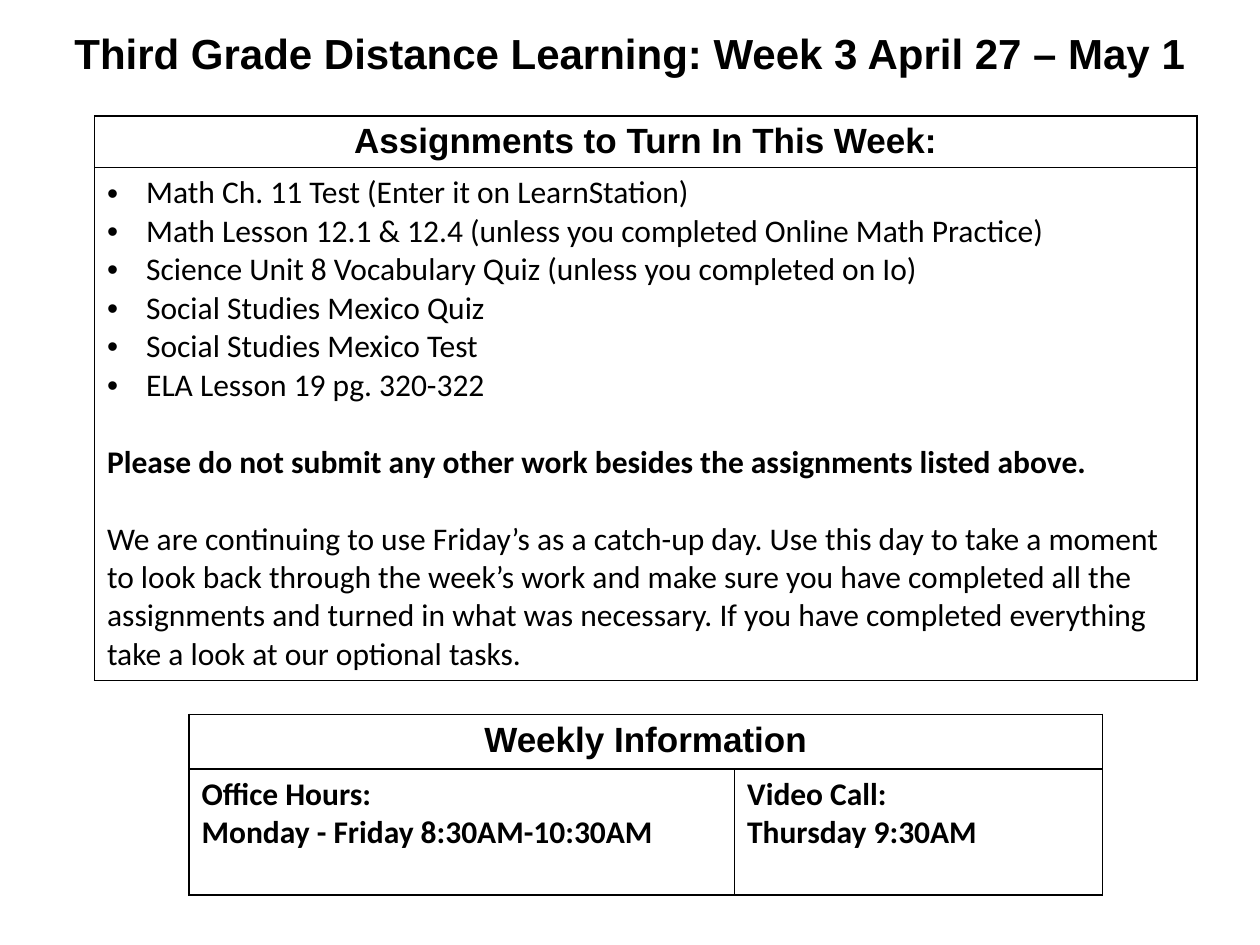
from dataclasses import dataclass

from lxml.etree import SubElement as Sub
from pptx import Presentation
from pptx.dml.color import RGBColor
from pptx.enum.text import MSO_AUTO_SIZE as Fit, PP_ALIGN as Align
from pptx.oxml.ns import qn
from pptx.util import Inches, Pt

INK, PAPER = "000000", "FFFFFF"
LINE = 22  # height of one body line, in points


@dataclass
class Para:
    text: str
    size: int = 18
    font: str = "Calibri"
    bold: bool = True
    mid: bool = False
    dot: bool = False
    gap: int = 0


@dataclass
class Grid:
    left: float
    top: float
    cols: list[float]
    rows: list[float]
    cells: list[list[list[Para]]]


def rgb(code: str) -> RGBColor:
    return RGBColor.from_string(code)


def head(text: str, size: int = 20) -> Para:
    return Para(text, size, "Arial", mid=True)


def write(frame, paras: list[Para]) -> None:
    for i, item in enumerate(paras):
        para = frame.add_paragraph() if i else frame.paragraphs[0]
        para.alignment = Align.CENTER if item.mid else Align.LEFT
        if item.gap:
            para.space_before = Pt(item.gap)
        if item.dot:
            props = para._p.get_or_add_pPr()
            props.set("marL", str(Inches(0.31)))
            props.set("indent", str(Inches(-0.31)))
            Sub(props, qn("a:buFont"), typeface="Arial")
            Sub(props, qn("a:buChar"), char="•")
        run = para.add_run()
        run.text = item.text
        font = run.font
        font.name, font.size, font.bold = item.font, Pt(item.size), item.bold
        font.color.rgb = rgb(INK)


def style(cell) -> None:
    props = cell._tc.get_or_add_tcPr()
    for side in ("lnL", "lnR", "lnT", "lnB"):
        line = Sub(props, qn(f"a:{side}"), w=str(Pt(1)))
        Sub(Sub(line, qn("a:solidFill")), qn("a:srgbClr"), val=INK)
    cell.fill.solid()
    cell.fill.fore_color.rgb = rgb(PAPER)


def draw(slide, grid: Grid) -> None:
    table = slide.shapes.add_table(
        len(grid.rows), len(grid.cols), Inches(grid.left), Inches(grid.top),
        Inches(sum(grid.cols)), Inches(sum(grid.rows))).table
    table.first_row = table.horz_banding = False
    for col, width in zip(table.columns, grid.cols):
        col.width = Inches(width)
    for row, height in zip(table.rows, grid.rows):
        row.height = Inches(height)
    for cell in table.iter_cells():
        style(cell)
    # A row with a single cell spans every column
    for r, row in enumerate(grid.cells):
        if len(row) < len(grid.cols):
            table.cell(r, 0).merge(table.cell(r, len(grid.cols) - 1))
        for c, paras in enumerate(row):
            write(table.cell(r, c).text_frame, paras)


TASKS = [
    "Math Ch. 11 Test (Enter it on LearnStation)",
    "Math Lesson 12.1 & 12.4 (unless you completed Online Math Practice)",
    "Science Unit 8 Vocabulary Quiz (unless you completed on Io)",
    "Social Studies Mexico Quiz",
    "Social Studies Mexico Test",
    "ELA Lesson 19 pg. 320-322",
]
NOTES = [
    Para("Please do not submit any other work besides the assignments "
         "listed above.", gap=LINE),
    Para("We are continuing to use Friday’s as a catch-up day. Use this day "
         "to take a moment to look back through the week’s work and make "
         "sure you have completed all the assignments and turned in what was "
         "necessary. If you have completed everything take a look at our "
         "optional tasks.", bold=False, gap=LINE),
]
WORK = Grid(0.75, 0.92, [8.75], [0.41, 4.07], [
    [[head("Assignments to Turn In This Week:")]],
    [[Para(task, bold=False, dot=True) for task in TASKS] + NOTES],
])
INFO = Grid(1.5, 5.67, [4.33, 2.92], [0.43, 1], [
    [[head("Weekly Information")]],
    [[Para("Office Hours:"), Para("Monday - Friday 8:30AM-10:30AM")],
     [Para("Video Call:"), Para("Thursday 9:30AM")]],
])


def main() -> None:
    deck = Presentation()
    deck.slide_width, deck.slide_height = Inches(10), Inches(7.5)
    slide = deck.slides.add_slide(deck.slide_layouts[6])

    # Assignments
    draw(slide, WORK)

    # Title
    box = slide.shapes.add_textbox(0, Inches(0.17), Inches(10), Inches(0.5))
    frame = box.text_frame
    frame.word_wrap = True
    frame.auto_size = Fit.SHAPE_TO_FIT_TEXT
    write(frame, [head("Third Grade Distance Learning: "
                       "Week 3 April 27 – May 1", 24)])

    # Weekly information
    draw(slide, INFO)
    deck.save("out.pptx")


if __name__ == "__main__":
    main()
